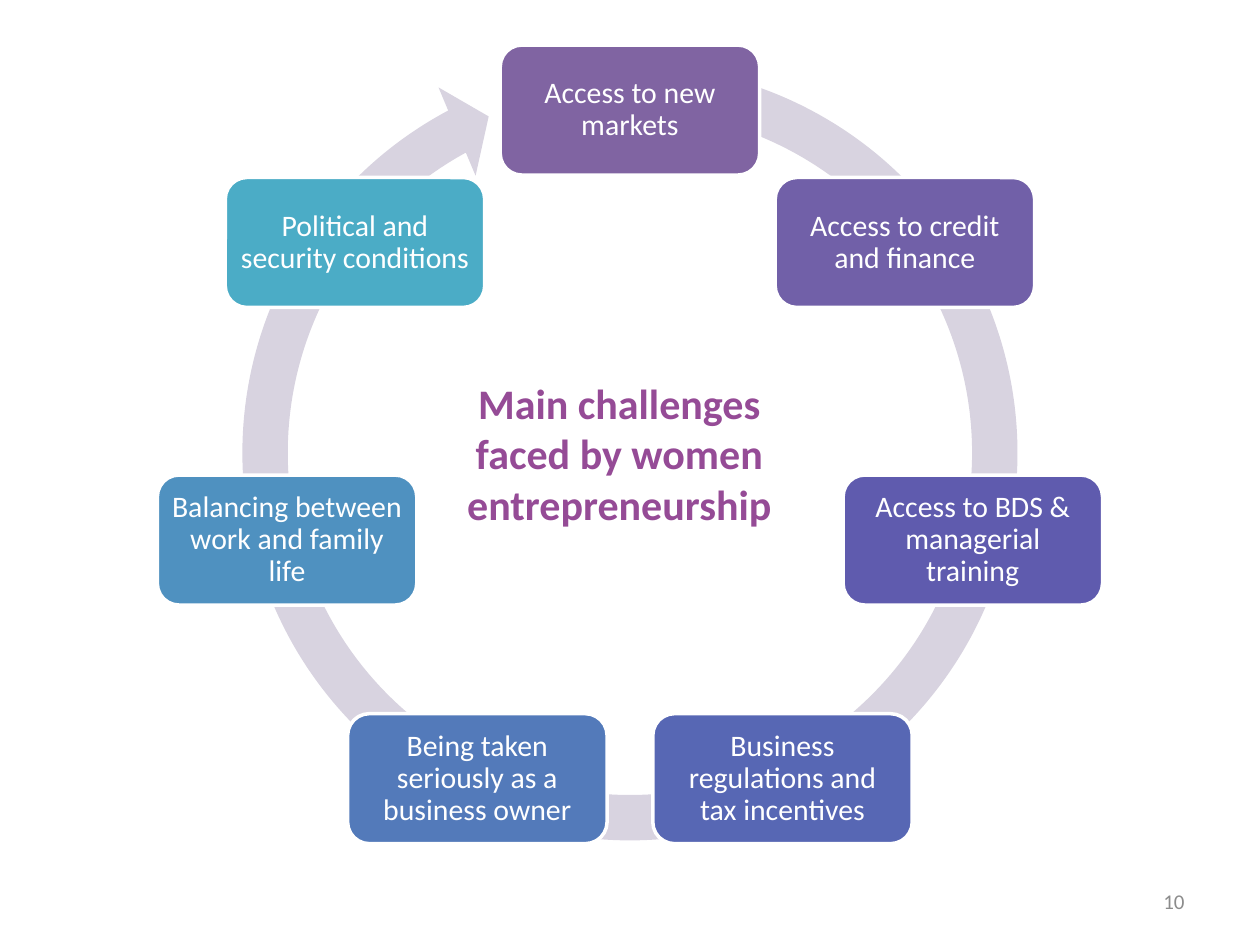
"""Build a slide showing a cycle of challenges faced by women entrepreneurs."""
from math import cos, pi, sin

from pptx import Presentation
from pptx.dml.color import RGBColor
from pptx.enum.shapes import MSO_SHAPE as Shape
from pptx.enum.text import MSO_ANCHOR as Anchor, MSO_AUTO_SIZE as AutoSize, PP_ALIGN as Align
from pptx.util import Cm, Pt

WHITE = RGBColor(0xFF, 0xFF, 0xFF)
LAVENDER = RGBColor(0xD8, 0xD3, 0xE0)
PLUM = RGBColor(0x95, 0x4B, 0x96)
GRAY = RGBColor(0x8C, 0x8C, 0x8C)
CHALLENGES = [
    ("Access to new markets", RGBColor(0x80, 0x64, 0xA2)),
    ("Access to credit and finance", RGBColor(0x71, 0x60, 0xA8)),
    ("Access to BDS & managerial training", RGBColor(0x5F, 0x5B, 0xAE)),
    ("Business regulations and tax incentives", RGBColor(0x57, 0x67, 0xB4)),
    ("Being taken seriously as a business owner", RGBColor(0x53, 0x7A, 0xBA)),
    ("Balancing between work and family life", RGBColor(0x4F, 0x91, 0xC0)),
    ("Political and security conditions", RGBColor(0x4B, 0xAC, 0xC6)),
]
CENTER_X, CENTER_Y, RADIUS = 12.7, 9.31, 7.09
BOX_WIDTH, BOX_HEIGHT = 5.23, 2.62
ARROW_SIZE = 16.64


def write_text(shape, text, size, color, alignment, bold=False):
    frame = shape.text_frame
    frame.text = text
    frame.word_wrap = True
    frame.auto_size = AutoSize.NONE
    frame.vertical_anchor = Anchor.MIDDLE
    paragraph = frame.paragraphs[0]
    paragraph.alignment = alignment
    font = paragraph.runs[0].font
    font.name = "Calibri"
    font.size = Pt(size)
    font.bold = bold
    font.color.rgb = color


presentation = Presentation()
presentation.slide_width = Cm(25.4)
presentation.slide_height = Cm(19.05)
slide = presentation.slides.add_slide(presentation.slide_layouts[5])
shapes = slide.shapes

title = shapes.title
title.left, title.top, title.width, title.height = Cm(8.89), Cm(6.53), Cm(7.19), Cm(5.21)
write_text(title, "Main challenges faced by women entrepreneurship", 24, PLUM, Align.CENTER, True)

arrow = shapes.add_shape(
    Shape.CIRCULAR_ARROW, Cm(CENTER_X - ARROW_SIZE / 2), Cm(0.81), Cm(ARROW_SIZE), Cm(ARROW_SIZE)
)
for index, value in enumerate([0.055, 3.307, 145.028, 169.576, 0.058]):
    arrow.adjustments[index] = value
arrow.shadow.inherit = False
arrow.fill.solid()
arrow.fill.fore_color.rgb = LAVENDER
arrow.line.fill.background()

for index, (challenge, color) in enumerate(CHALLENGES):
    angle = 2 * pi * index / len(CHALLENGES)
    left = CENTER_X + RADIUS * sin(angle) - BOX_WIDTH / 2
    top = CENTER_Y - RADIUS * cos(angle) - BOX_HEIGHT / 2
    box = shapes.add_shape(
        Shape.ROUNDED_RECTANGLE, Cm(left), Cm(top), Cm(BOX_WIDTH), Cm(BOX_HEIGHT)
    )
    box.shadow.inherit = False
    box.fill.solid()
    box.fill.fore_color.rgb = color
    box.line.color.rgb = WHITE
    box.line.width = Pt(2)
    write_text(box, challenge, 17, WHITE, Align.CENTER)
    frame = box.text_frame
    frame.margin_left = frame.margin_right = Cm(0.17)
    frame.margin_top = frame.margin_bottom = Cm(0.17)
    frame.paragraphs[0].line_spacing = 0.9

page_number = shapes.add_textbox(Cm(18.2), Cm(17.66), Cm(5.93), Cm(1.01))
write_text(page_number, "10", 12, GRAY, Align.RIGHT)

presentation.save("out.pptx")
